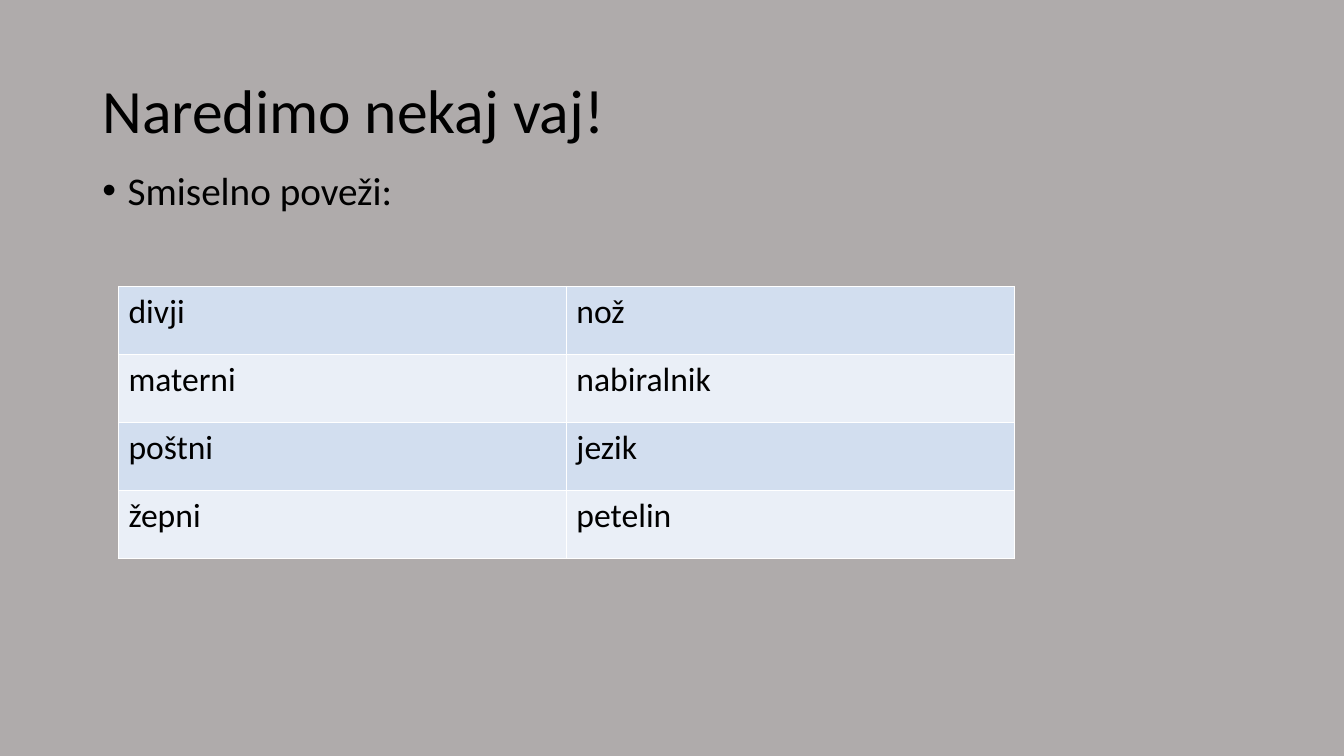
from dataclasses import dataclass

from lxml import etree
from pptx import Presentation
from pptx import util as u
from pptx.dml import color
from pptx.enum import text
from pptx.oxml import ns


@dataclass(frozen=True)
class Theme:
    font: str = "Calibri"
    background: str = "AFABAB"
    ink: str = "000000"
    border: str = "FFFFFF"
    bands: tuple = ("D2DEEF", "EAEFF7")
    title_size: float = 44
    body_size: float = 28
    cell_size: float = 24


THEME = Theme()
WORD_PAIRS = (
    ("divji", "nož"),
    ("materni", "nabiralnik"),
    ("poštni", "jezik"),
    ("žepni", "petelin"),
)


def apply(target, values):
    for name, value in values.items():
        setattr(target, name, value)


def place(part, box):
    apply(part, dict(zip(("left", "top", "width", "height"), map(u.Pt, box))))


def write(frame, wording, size, **paragraph_format):
    frame.text = wording
    line = frame.paragraphs[0]
    apply(line, {"alignment": text.PP_ALIGN.LEFT, **paragraph_format})
    font = line.runs[0].font
    apply(font, {"name": THEME.font, "size": u.Pt(size), "bold": False})
    font.color.rgb = color.RGBColor.from_string(THEME.ink)
    return line


def paint(fill, shade):
    fill.solid()
    fill.fore_color.rgb = color.RGBColor.from_string(shade)


def add_title(slide, box):
    title = slide.shapes.title
    place(title, box)
    write(title.text_frame, "Naredimo nekaj vaj!", THEME.title_size, line_spacing=0.9)
    apply(title.text_frame, {
        "vertical_anchor": text.MSO_ANCHOR.MIDDLE,
        "auto_size": text.MSO_AUTO_SIZE.NONE,
        "word_wrap": True,
    })


def add_instruction(slide, box):
    instruction = slide.placeholders[1]
    place(instruction, box)
    line = write(instruction.text_frame, "Smiselno poveži:", THEME.body_size,
                 line_spacing=0.9, space_before=u.Pt(10))
    instruction.text_frame.auto_size = text.MSO_AUTO_SIZE.NONE
    properties = line._p.get_or_add_pPr()
    for name, indent in {"marL": 18, "indent": -18}.items():
        properties.set(name, str(u.Pt(indent)))
    etree.SubElement(properties, ns.qn("a:buFont"), typeface="Arial")
    etree.SubElement(properties, ns.qn("a:buChar"), char="•")


def add_borders(cell):
    properties = cell._tc.get_or_add_tcPr()
    for side in ("lnL", "lnR", "lnT", "lnB"):
        edge = etree.SubElement(properties, ns.qn(f"a:{side}"), w=str(u.Pt(1)))
        fill = etree.SubElement(edge, ns.qn("a:solidFill"))
        etree.SubElement(fill, ns.qn("a:srgbClr"), val=THEME.border)


def add_word_table(slide, box):
    words = slide.shapes.add_table(
        len(WORD_PAIRS), len(WORD_PAIRS[0]), *map(u.Pt, box)).table
    apply(words, {"first_row": False, "horz_banding": False})
    for row, pair in enumerate(WORD_PAIRS):
        for column, word in enumerate(pair):
            cell = words.cell(row, column)
            write(cell.text_frame, word, THEME.cell_size)
            add_borders(cell)
            paint(cell.fill, THEME.bands[row % len(THEME.bands)])


def main():
    deck = Presentation()
    apply(deck, {"slide_width": u.Pt(960), "slide_height": u.Pt(540)})
    slide = deck.slides.add_slide(deck.slide_layouts[1])
    paint(slide.background.fill, THEME.background)
    add_title(slide, (66, 28.75, 828, 104.4))
    add_instruction(slide, (66, 118.75, 894, 342.6))
    add_word_table(slide, (84.6, 204.6, 640, 194.4))
    deck.save("out.pptx")


if __name__ == "__main__":
    main()
